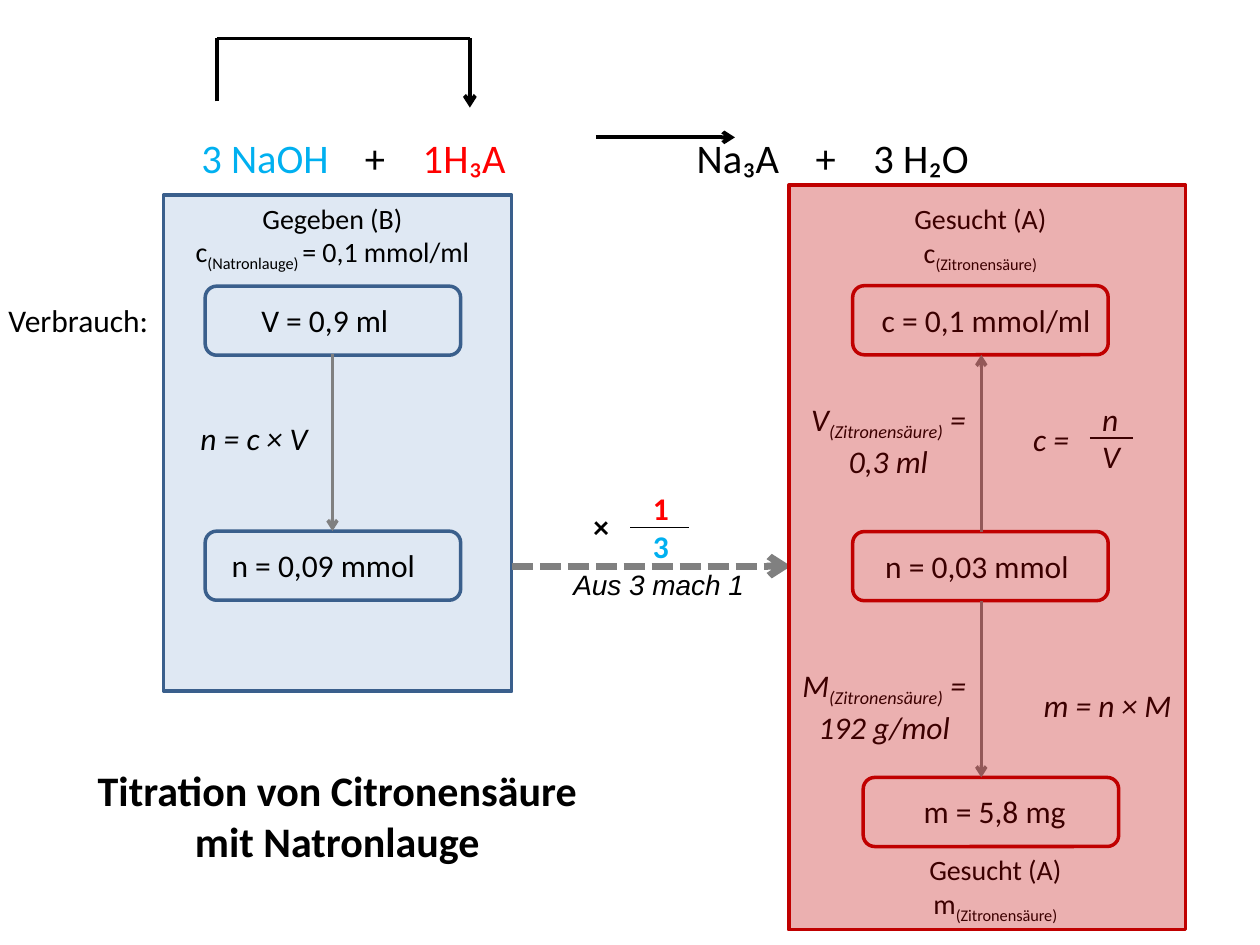
from lxml.etree import SubElement
from pptx import Presentation
from pptx.dml.color import RGBColor
from pptx.enum.dml import MSO_LINE
from pptx.enum.shapes import MSO_CONNECTOR, MSO_SHAPE
from pptx.enum.text import MSO_ANCHOR, MSO_AUTO_SIZE, PP_ALIGN
from pptx.oxml.ns import qn
from pptx.util import Pt

HUES = {"black": "000000", "blue": "4F81BD", "navy": "3A5F8C", "sky": "00B0F0",
        "red": "FF0000", "wine": "C00000", "gray": "808080"}
PILL_W, PILL_H = 146, 39.5
MID = PP_ALIGN.CENTER


def hue(name):
    return RGBColor.from_string(HUES[name])


def style(par, size, bold=False, slant=False, face="Calibri", tint="black"):
    font = par.font
    font.name, font.size, font.bold, font.italic = face, Pt(size), bold, slant
    font.color.rgb = hue(tint)


def raise_run(run, base):
    run.font._element.set("baseline", str(base * 1000))


def frame(slide, x, y, w, h, wrap=False):
    text = slide.shapes.add_textbox(Pt(x), Pt(y), Pt(w), Pt(h)).text_frame
    text.word_wrap = wrap
    return text


def write(slide, x, y, w, lines, size=18, align=PP_ALIGN.LEFT, **look):
    """Add lines of text; pieces between underscores are subscripts."""
    text = frame(slide, x, y, w, len(lines) * size * 1.22 + 7.2)
    for i, line in enumerate(lines):
        par = text.add_paragraph() if i else text.paragraphs[0]
        par.alignment = align
        style(par, size, **look)
        for j, piece in enumerate(line.split("_")):
            run = par.add_run()
            run.text = piece
            if j % 2:
                raise_run(run, -25)
    return text


def stroke(slide, start, end, width, tint="black", head=False, dash=None):
    line = slide.shapes.add_connector(
        MSO_CONNECTOR.STRAIGHT, *(Pt(v) for v in (*start, *end)))
    line.line.width = Pt(width)
    line.line.color.rgb = hue(tint)
    if dash:
        line.line.dash_style = dash
    props = line._element.spPr
    if head:
        SubElement(props.find(qn("a:ln")), qn("a:tailEnd"), type="arrow")
    SubElement(props, qn("a:effectLst"))


def outline(slide, kind, x, y, w, h, tint):
    shape = slide.shapes.add_shape(kind, Pt(x), Pt(y), Pt(w), Pt(h))
    shape.shadow.inherit = False
    shape.fill.background()
    shape.line.color.rgb = hue(tint)
    shape.line.width = Pt(2)
    return shape


def panel(slide, box, fill, edge, alpha):
    """Add a see-through panel."""
    shape = outline(slide, MSO_SHAPE.RECTANGLE, *box, edge)
    shape.fill.solid()
    shape.fill.fore_color.rgb = hue(fill)
    tone = shape._element.spPr.find(qn("a:solidFill"))[0]
    SubElement(tone, qn("a:alpha"), val=str(alpha * 1000))


def pill(slide, x, y, label, inset, width, tint):
    write(slide, x + inset, y + 5, width, [label])
    outline(slide, MSO_SHAPE.ROUNDED_RECTANGLE, x, y, PILL_W, PILL_H, tint)


def title(slide, x, y, w, h):
    shape = slide.shapes.title
    shape.left, shape.top, shape.width, shape.height = map(Pt, (x, y, w, h))
    text = shape.text_frame
    text.word_wrap, text.auto_size = False, MSO_AUTO_SIZE.NONE
    text.vertical_anchor = MSO_ANCHOR.TOP
    text.text = "Titration von Citronensäure\nmit Natronlauge"
    for par in text.paragraphs:
        par.alignment = MID
        style(par, 24, bold=True)


def equation(slide, x, y, w, h):
    """Add the reaction with its arrow and the bracket above it."""
    par = frame(slide, x, y, w, h, wrap=True).paragraphs[0]
    style(par, 40)
    tabs = SubElement(par._p.get_or_add_pPr(), qn("a:tabLst"))
    par._p.pPr.insert(0, tabs)
    for stop in (93.5, 126.5, 283, 351, 384):
        SubElement(tabs, qn("a:tab"), pos=str(Pt(stop)), algn="l")
    for words, tint in (("3 NaOH", "sky"), ("\t+", "black"), ("\t1H₃A", "red"),
                        ("\tNa₃A\t+\t3 H₂O", "black")):
        run = par.add_run()
        run.text = words
        run.font.color.rgb = hue(tint)
        raise_run(run, 30)
    stroke(slide, (x + 232.5, y + 11), (x + 312, y + 11), 2.25, head=True)
    left, right, top = x + 16, x + 160.5, y - 45.5
    stroke(slide, (left, y - 9.5), (left, top), 2.25)
    stroke(slide, (left, top), (right, top), 2.25)
    stroke(slide, (right, top), (right, y - 6), 2.25, head=True)


def given(slide, x, y, w, h):
    """Add the known side: consumption and amount of lye."""
    panel(slide, (x, y, w, h), "blue", "navy", 18)
    write(slide, x + 6, y, 181, ["Gegeben (B)", "c_(Natronlauge) _= 0,1 mmol/ml"],
          size=16, align=MID)
    pill(slide, x + 23.75, y + 52, "V = 0,9 ml", 25, 88, "navy")
    pill(slide, x + 23.75, y + 192, "n = 0,09 mmol", 8, 121, "navy")
    stroke(slide, (x + 96.5, y + 91), (x + 96.5, y + 192), 2, "gray", head=True)
    write(slide, x + 14, y + 124.5, 77, ["n = c × V"], slant=True)
    write(slide, x - 95.75, y + 57, 96, ["Verbrauch:"])


def sought(slide, x, y, w, h):
    """Add the wanted side: concentration, amount and mass of acid."""
    for px, py, label, inset, width in (
            (36.5, 57.5, "c = 0,1 mmol/ml", 9.5, 135),
            (36.5, 198, "n = 0,03 mmol", 11.5, 121),
            (42.5, 338.5, "m = 5,8 mg", 27.5, 96.5)):
        pill(slide, x + px, y + py, label, inset, width, "wine")
    for start, end in ((198, 97), (237.5, 338.5)):
        stroke(slide, (x + 110, y + start), (x + 110, y + end), 2, "gray", head=True)
    for px, py, width, sign in ((64, 6, 91, "c"), (70.5, 378, 95, "m")):
        write(slide, x + px, y + py, width, ["Gesucht (A)", f"{sign}_(Zitronensäure)"],
              size=16, align=MID)
    for px, py, width, sign, value in ((0, 119, 114, "V", "0,3 ml"),
                                       (-5, 271, 119, "M", "192 g/mol")):
        write(slide, x + px, y + py, width, [f"{sign}_(Zitronensäure)_ =", value],
              align=MID, slant=True)
    write(slide, x + 132.5, y + 130.5, 48, ["c ="], slant=True)
    write(slide, x + 172, y + 119, 25, ["n", "V"], slant=True)
    stroke(slide, (x + 172, y + 144.5), (x + 196.5, y + 144.5), 0.75)
    write(slide, x + 138.5, y + 282.5, 89, ["m = n × M"], slant=True)
    panel(slide, (x, y, w, h), "wine", "wine", 31)


def ratio(slide, x, y, w):
    """Add the dashed arrow with its factor and rule of thumb."""
    stroke(slide, (x, y), (x + w, y), 4, "gray", head=True, dash=MSO_LINE.SQUARE_DOT)
    write(slide, x + 28, y - 3, 113, ["Aus 3 mach 1"], size=16, slant=True, face="Arial")
    write(slide, x + 39.5, y - 37.5, 24, ["×"], bold=True)
    parts = write(slide, x + 73.5, y - 47.5, 25, ["1", "3"], bold=True)
    for par, tint in zip(parts.paragraphs, ("red", "sky")):
        par.font.color.rgb = hue(tint)
    stroke(slide, (x + 67.5, y - 22), (x + 101.5, y - 22), 1)


def main():
    deck = Presentation()
    deck.slide_width, deck.slide_height = Pt(720), Pt(540)
    slide = deck.slides.add_slide(deck.slide_layouts[5])
    given(slide, 93.5, 111.5, 199, 283.5)
    equation(slide, 108, 67.5, 589.5, 39.5)
    ratio(slide, 292.5, 323.5, 159.5)
    sought(slide, 450.75, 105.75, 226.75, 425.5)
    title(slide, 44.5, 433.5, 296.5, 65.5)
    deck.save("out.pptx")


if __name__ == "__main__":
    main()
